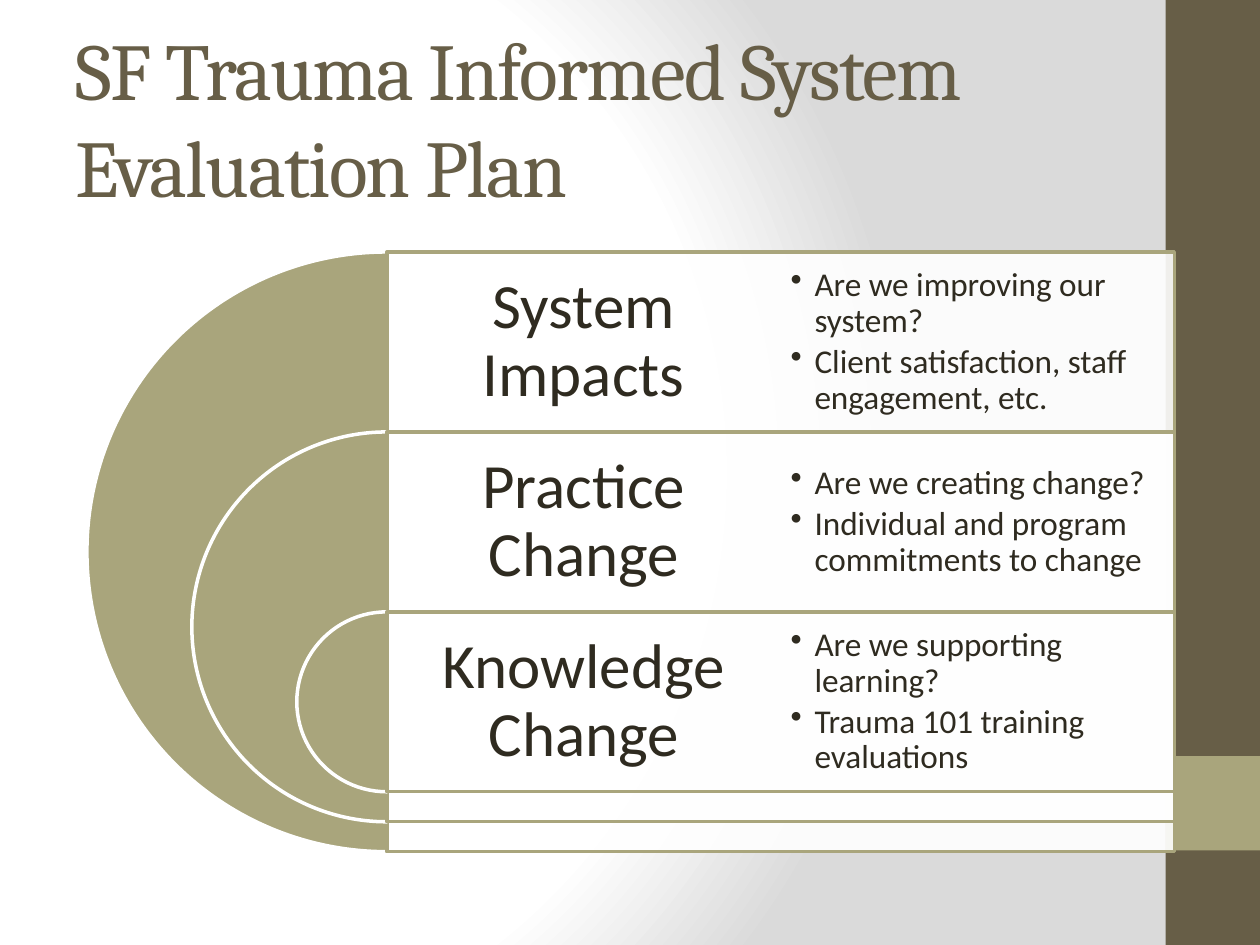
from pptx import Presentation
from pptx.dml.color import RGBColor
from pptx.enum.shapes import MSO_SHAPE
from pptx.enum.text import MSO_ANCHOR, PP_ALIGN
from pptx.oxml import parse_xml
from pptx.oxml.ns import qn
from pptx.util import Inches, Pt
from lxml import etree

RECT = MSO_SHAPE.RECTANGLE
PIE = MSO_SHAPE.PIE
MIDDLE = MSO_ANCHOR.MIDDLE
LEFT = PP_ALIGN.LEFT
CENTER = PP_ALIGN.CENTER

BROWN, OLIVE, INK, WHITE, GRAY = "675E47", "A9A57C", "2F2B20", "FFFFFF", "DADADA"
NS = "http://schemas.openxmlformats.org/drawingml/2006/main"

ROWS = [
    ("System Impacts",
     ["Are we improving our system?", "Client satisfaction, staff engagement, etc."]),
    ("Practice Change",
     ["Are we creating change?", "Individual and program commitments to change"]),
    ("Knowledge Change",
     ["Are we supporting learning?", "Trauma 101 training evaluations"]),
]


def color(code):
    return RGBColor.from_string(code)


def add_shape(slide, kind, box, fill, line=None):
    shape = slide.shapes.add_shape(kind, *map(Inches, box))
    shape.shadow.inherit = False
    shape.fill.solid()
    shape.fill.fore_color.rgb = color(fill)
    if line:
        shape.line.color.rgb = color(line)
        shape.line.width = Pt(2)
    else:
        shape.line.fill.background()
    return shape


def add_text(slide, box, lines, size, font, ink, align=LEFT, inset=0.1, space=0.9):
    frame = slide.shapes.add_textbox(*map(Inches, box)).text_frame
    frame.word_wrap = True
    frame.vertical_anchor = MIDDLE
    frame.margin_left = frame.margin_right = Inches(inset)
    frame.margin_top = frame.margin_bottom = Inches(min(inset, 0.15))
    for i, line in enumerate(lines):
        para = frame.add_paragraph() if i else frame.paragraphs[0]
        para.alignment = align
        para.line_spacing = space
        run = para.add_run()
        run.text = line
        run.font.size = Pt(size)
        run.font.name = font
        run.font.color.rgb = color(ink)
    return frame


def add_back(slide):
    slide.background.fill.solid()
    solid = slide.background.fill._xPr.find(qn("a:solidFill"))
    stops = "".join(
        f'<a:gs pos="{pos * 1000}"><a:srgbClr val="{code}"/></a:gs>'
        for pos, code in [(0, WHITE), (75, WHITE), (100, GRAY)])
    grad = parse_xml(
        f'<a:gradFill xmlns:a="{NS}" rotWithShape="1"><a:gsLst>{stops}</a:gsLst>'
        '<a:path path="circle"><a:fillToRect l="20000" t="50000" r="100000" b="50000"/>'
        '</a:path></a:gradFill>')
    solid.getparent().replace(solid, grad)


def add_band(slide, left, top, width, height):
    add_shape(slide, RECT, (left, top, width, height), BROWN)
    add_shape(slide, RECT, (left, 6, width, width), OLIVE)


def add_title(slide, box):
    frame = add_text(slide, box, ["SF Trauma Informed System Evaluation Plan"],
                     46, "Cambria", BROWN, space=1.0)
    frame.paragraphs[0].runs[0].font._element.set("spc", "-100")


def add_points(slide, box, lines):
    frame = add_text(slide, box, lines, 19, "Calibri", INK, inset=0.08)
    for para in frame.paragraphs:
        para.space_after = Pt(2.85)
        props = para._p.get_or_add_pPr()
        props.set("marL", str(Inches(0.19)))
        props.set("indent", str(-Inches(0.19)))
        etree.SubElement(props, qn("a:buChar")).set("char", "•")


def add_target(slide, left, top, width, height):
    mid = left + height / 2
    wide = width - height / 2
    step = height * 0.3
    for i, (head, points) in enumerate(ROWS):
        size = height * (1 - 0.35 * i)
        y = top + i * step
        pie = add_shape(slide, PIE, (mid - size / 2, y, size, size), OLIVE, WHITE)
        pie.adjustments[0] = 54
        pie.adjustments[1] = 162
        panel = add_shape(slide, RECT, (mid, y, wide, size), WHITE, OLIVE)
        tint = panel.fill._xPr.find(qn("a:solidFill"))[0]
        etree.SubElement(tint, qn("a:alpha")).set("val", "90000")
        add_text(slide, (mid, y, wide / 2, step), [head], 36, "Calibri", INK,
                 CENTER, 0.15)
        add_points(slide, (mid + wide / 2, y, wide / 2, step), points)


def main():
    deck = Presentation()
    deck.slide_width = Inches(10)
    deck.slide_height = Inches(7.5)
    slide = deck.slides.add_slide(deck.slide_layouts[6])
    add_back(slide)
    add_band(slide, 9.25, 0, 0.75, 7.5)
    add_title(slide, (0.5, 0.3, 8.33, 1.25))
    add_target(slide, 0.69, 2, 8.63, 4.76)
    deck.save("out.pptx")


if __name__ == "__main__":
    main()
